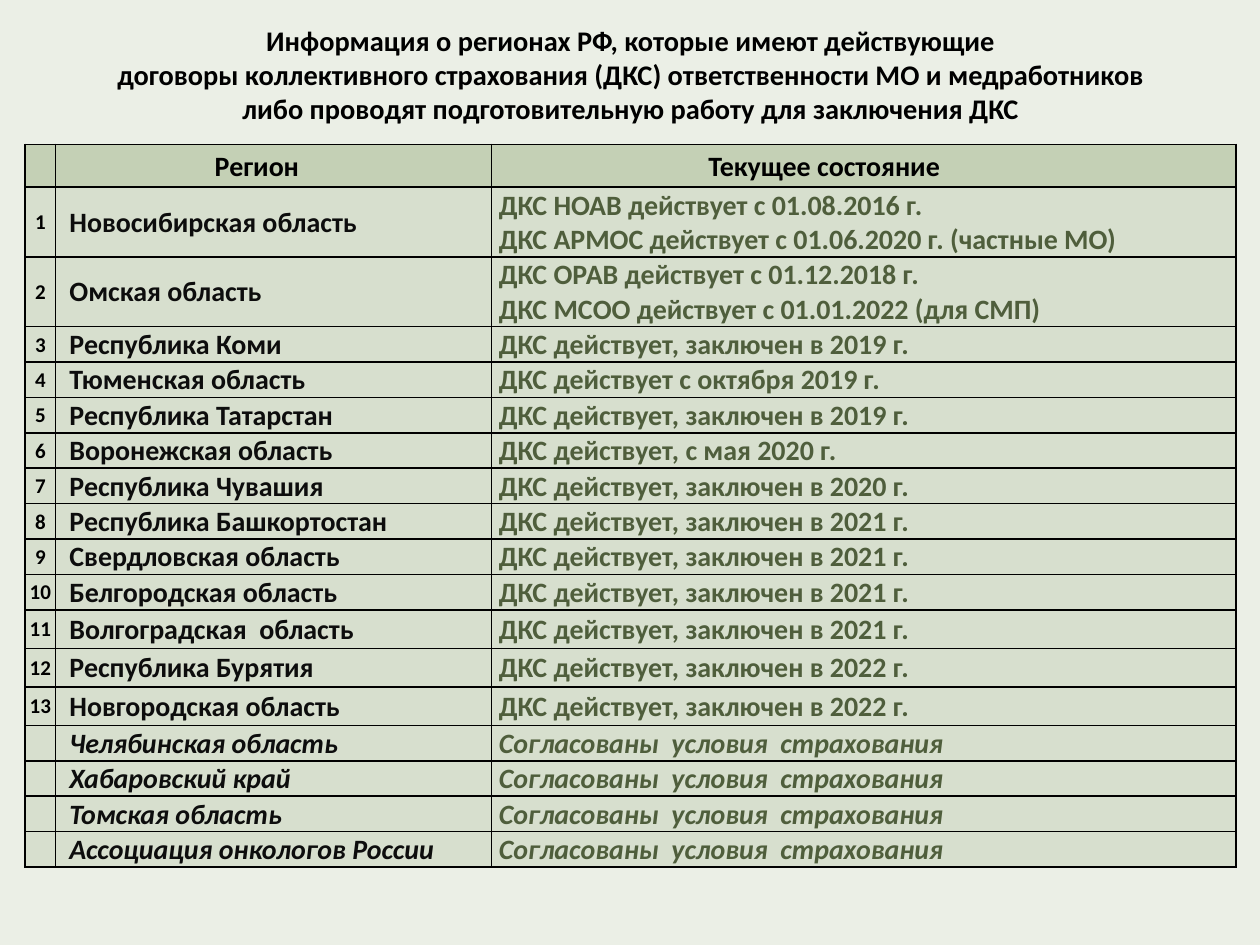
from dataclasses import dataclass

from lxml import etree
from pptx import Presentation
from pptx.dml.color import RGBColor
from pptx.enum import text
from pptx.oxml import ns
from pptx.util import Pt

FONT = "Calibri"
BLACK = RGBColor(0x00, 0x00, 0x00)
REGION_TEXT = RGBColor(0x0D, 0x0D, 0x0D)
STATUS_TEXT = RGBColor(0x4F, 0x5E, 0x3C)
BACKGROUND = RGBColor(0xEB, 0xEF, 0xE6)
HEADER_FILL = RGBColor(0xC4, 0xD0, 0xB5)
BODY_FILL = RGBColor(0xD7, 0xDF, 0xCE)

COL_WIDTHS = (17.3, 249.1, 425.5)
HEADER_HEIGHT = 24.5
LINE_HEIGHT = 20.25
TALL_HEIGHT = 22
DOUBLE_HEIGHT = 39.8

TITLE = (
    "Информация о регионах РФ, которые имеют действующие\v"
    "договоры коллективного страхования (ДКС) ответственности МО и медработников\v"
    "либо проводят подготовительную работу для заключения ДКС"
)
AGREED = "Согласованы  условия  страхования"


@dataclass(frozen=True)
class Region:
    name: str
    status: str
    height: float = LINE_HEIGHT
    signed: bool = True


@dataclass(frozen=True)
class CellStyle:
    color: RGBColor
    fill: RGBColor = BODY_FILL
    size: float = 16
    left: float = 0.72
    align: text.PP_ALIGN = text.PP_ALIGN.LEFT
    italic: bool = False


REGIONS = [
    Region("Новосибирская область",
           "ДКС НОАВ действует с 01.08.2016 г.\n"
           "ДКС АРМОС действует с 01.06.2020 г. (частные МО)", DOUBLE_HEIGHT),
    Region("Омская область",
           "ДКС ОРАВ действует с 01.12.2018 г.\n"
           "ДКС МСОО действует с 01.01.2022 (для СМП)", DOUBLE_HEIGHT),
    Region("Республика Коми", "ДКС действует, заключен в 2019 г."),
    Region("Тюменская область", "ДКС действует с октября 2019 г."),
    Region("Республика Татарстан", "ДКС действует, заключен в 2019 г."),
    Region("Воронежская область", "ДКС действует, с мая 2020 г."),
    Region("Республика Чувашия", "ДКС действует, заключен в 2020 г."),
    Region("Республика Башкортостан", "ДКС действует, заключен в 2021 г."),
    Region("Свердловская область", "ДКС действует, заключен в 2021 г."),
    Region("Белгородская область", "ДКС действует, заключен в 2021 г."),
    Region("Волгоградская  область", "ДКС действует, заключен в 2021 г.", TALL_HEIGHT),
    Region("Республика Бурятия", "ДКС действует, заключен в 2022 г.", TALL_HEIGHT),
    Region("Новгородская область", "ДКС действует, заключен в 2022 г.", TALL_HEIGHT),
    Region("Челябинская область", AGREED, signed=False),
    Region("Хабаровский край", AGREED, signed=False),
    Region("Томская область", AGREED, signed=False),
    Region("Ассоциация онкологов России", AGREED, signed=False),
]


def format_text(tf, size: float, color: RGBColor, align, italic: bool = False) -> None:
    for p in tf.paragraphs:
        p.alignment = align
        for r in p.runs:
            r.font.name = FONT
            r.font.size = Pt(size)
            r.font.bold = True
            r.font.italic = italic
            r.font.color.rgb = color
        if not p.runs:  # keeps an empty cell from stretching its row
            end = etree.SubElement(p._p, ns.qn("a:endParaRPr"))
            end.set("sz", str(int(size * 100)))


def add_borders(cell) -> None:
    tc_pr = cell._tc.get_or_add_tcPr()
    for side in ("L", "R", "T", "B"):
        ln = etree.SubElement(tc_pr, ns.qn(f"a:ln{side}"), w=str(Pt(1)))
        fill = etree.SubElement(ln, ns.qn("a:solidFill"))
        etree.SubElement(fill, ns.qn("a:srgbClr"), val=str(BLACK))


def fill_cell(cell, content: str, style: CellStyle) -> None:
    cell.text_frame.text = content
    cell.vertical_anchor = text.MSO_ANCHOR.MIDDLE
    cell.margin_left = Pt(style.left)
    cell.margin_right = cell.margin_top = Pt(0.72)
    cell.margin_bottom = Pt(0)
    format_text(cell.text_frame, style.size, style.color, style.align, style.italic)
    add_borders(cell)
    cell.fill.solid()
    cell.fill.fore_color.rgb = style.fill


def add_title(s) -> None:
    sp = s.shapes.add_textbox(Pt(36.7), Pt(9.4), Pt(647), Pt(73.4))
    tf = sp.text_frame
    tf.word_wrap = True
    tf.vertical_anchor = text.MSO_ANCHOR.MIDDLE
    tf.margin_top, tf.margin_bottom = Pt(0), Pt(7)
    tf.text = TITLE
    format_text(tf, 16.2, BLACK, text.PP_ALIGN.CENTER)


def add_region_table(s) -> None:
    heights = [HEADER_HEIGHT] + [region.height for region in REGIONS]
    table = s.shapes.add_table(
        len(heights), len(COL_WIDTHS), Pt(14.4), Pt(82.5),
        Pt(sum(COL_WIDTHS)), Pt(sum(heights))).table
    table.first_row = table.horz_banding = False
    for column, width in zip(table.columns, COL_WIDTHS):
        column.width = Pt(width)
    for row, height in zip(table.rows, heights):
        row.height = Pt(height)

    # Header row
    headers = (("", 0.72), ("Регион", 91), ("Текущее состояние", 124))
    for col, (label, left) in enumerate(headers):
        fill_cell(table.cell(0, col), label, CellStyle(BLACK, HEADER_FILL, left=left))

    # Numbered regions, then those still preparing a contract
    number_style = CellStyle(BLACK, size=12, align=text.PP_ALIGN.CENTER)
    for row, region in enumerate(REGIONS, start=1):
        italic = not region.signed
        fill_cell(table.cell(row, 0), str(row) if region.signed else "", number_style)
        fill_cell(table.cell(row, 1), region.name,
                  CellStyle(REGION_TEXT, left=8, italic=italic))
        fill_cell(table.cell(row, 2), region.status,
                  CellStyle(STATUS_TEXT, left=4.3, italic=italic))


def main() -> None:
    prs = Presentation()
    prs.slide_width, prs.slide_height = Pt(720), Pt(540)
    s = prs.slides.add_slide(prs.slide_layouts[6])
    s.background.fill.solid()
    s.background.fill.fore_color.rgb = BACKGROUND
    add_title(s)
    add_region_table(s)
    prs.save("out.pptx")


if __name__ == "__main__":
    main()
